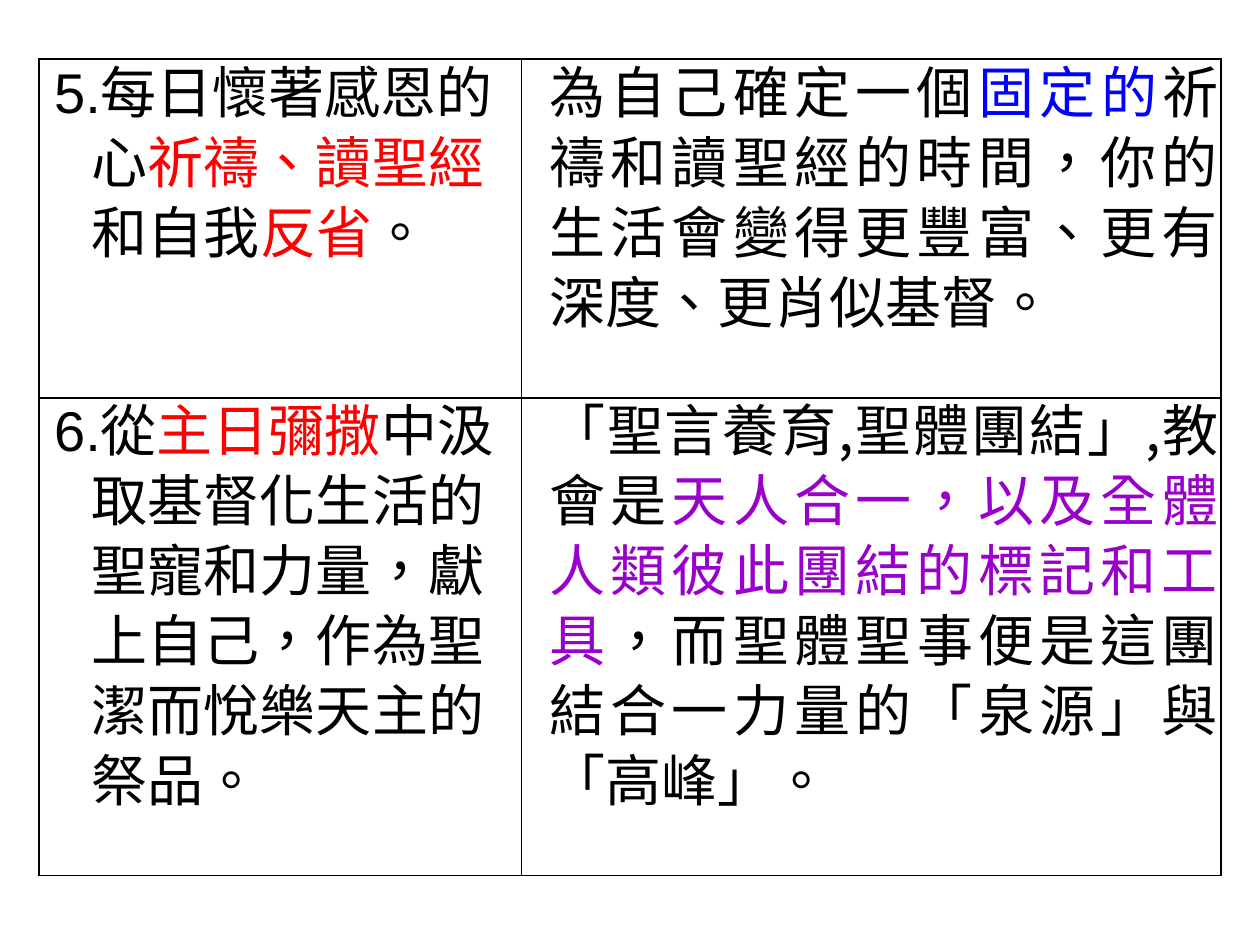
from lxml import etree
from pptx import Presentation
from pptx.dml.color import RGBColor
from pptx.enum.lang import MSO_LANGUAGE_ID
from pptx.enum.text import PP_ALIGN
from pptx.oxml.ns import qn
from pptx.util import Inches, Pt

JUSTIFY = PP_ALIGN.JUSTIFY
CHINESE = MSO_LANGUAGE_ID.TRADITIONAL_CHINESE
BLACK = RGBColor(0x00, 0x00, 0x00)
RED = RGBColor(0xFF, 0x00, 0x00)
BLUE = RGBColor(0x00, 0x00, 0xFF)
PURPLE = RGBColor(0x99, 0x00, 0xCC)
WHITE = RGBColor(0xFF, 0xFF, 0xFF)
LATIN_FONT = "Arial"
CHINESE_FONT = "Noto Sans CJK SC"

COLUMN_WIDTHS = [3.83, 5.55]
ROW_HEIGHTS = [2.69, 3.79]
NUMBER_INDENT = 0.1
PRACTICE_INDENT = 0.4
REASON_INDENT = 0.2
CELL_FORMAT = {
    "margin_left": Inches(0.02),
    "margin_right": Inches(0.02),
    "margin_top": 0,
    "margin_bottom": 0,
}
PARAGRAPH_FORMAT = {
    "alignment": JUSTIFY,
    "line_spacing": Pt(40),
    "space_before": Pt(0),
    "space_after": Pt(0),
}

PRACTICES_AND_REASONS = [
    (
        [
            [("5.每日懷著感恩的", BLACK)],
            [("心", BLACK), ("祈禱、讀聖經", RED)],
            [("和自我", BLACK), ("反省", RED), ("。", BLACK)],
        ],
        [[
            ("為自己確定一個", BLACK),
            ("固定的", BLUE),
            ("祈禱和讀聖經的時間，你的生活會變得更豐富、更有深度、更肖似基督。", BLACK),
        ]],
    ),
    (
        [
            [("6.從", BLACK), ("主日彌撒", RED), ("中汲", BLACK)],
            [("取基督化生活的", BLACK)],
            [("聖寵和力量，獻", BLACK)],
            [("上自己，作為聖", BLACK)],
            [("潔而悅樂天主的", BLACK)],
            [("祭品。", BLACK)],
        ],
        [[
            ("「聖言養育,聖體團結」,教會是", BLACK),
            ("天人合一，以及全體人類彼此團結的標記和工具", PURPLE),
            ("，而聖體聖事便是這團結合一力量的「泉源」與「高峰」。", BLACK),
        ]],
    ),
]


def add_borders(cell):
    properties = cell._tc.get_or_add_tcPr()
    for position, side in enumerate(("a:lnL", "a:lnR", "a:lnT", "a:lnB")):
        border = etree.Element(qn(side), w=str(Pt(1)))
        fill = etree.SubElement(border, qn("a:solidFill"))
        etree.SubElement(fill, qn("a:srgbClr"), val=str(BLACK))
        properties.insert(position, border)


def write_lines(cell, lines, latin_font, indents):
    for number, (line, indent) in enumerate(zip(lines, indents)):
        frame = cell.text_frame
        paragraph = frame.add_paragraph() if number else frame.paragraphs[0]
        for name, value in PARAGRAPH_FORMAT.items():
            setattr(paragraph, name, value)
        paragraph_properties = paragraph._p.get_or_add_pPr()
        paragraph_properties.set("marL", str(Inches(indent)))
        paragraph_properties.set("indent", "0")
        for text, color in line:
            run = paragraph.add_run()
            run.text = text
            run.font.size = Pt(32)
            run.font.name = latin_font
            run.font.color.rgb = color
            run.font.language_id = CHINESE
            etree.SubElement(run._r.rPr, qn("a:ea"), typeface=CHINESE_FONT)


presentation = Presentation()
presentation.slide_width = Inches(10)
presentation.slide_height = Inches(7.5)
slide = presentation.slides.add_slide(presentation.slide_layouts[6])

table = slide.shapes.add_table(
    len(ROW_HEIGHTS), len(COLUMN_WIDTHS),
    Inches(0.31), Inches(0.47),
    Inches(sum(COLUMN_WIDTHS)), Inches(sum(ROW_HEIGHTS)),
).table
table.first_row = False
table.horz_banding = False
for column, width in zip(table.columns, COLUMN_WIDTHS):
    column.width = Inches(width)
for row, height in zip(table.rows, ROW_HEIGHTS):
    row.height = Inches(height)

for row, (practice, reason) in zip(table.rows, PRACTICES_AND_REASONS):
    practice_cell, reason_cell = row.cells
    practice_indents = [NUMBER_INDENT] + [PRACTICE_INDENT] * (len(practice) - 1)
    write_lines(practice_cell, practice, LATIN_FONT, practice_indents)
    write_lines(reason_cell, reason, CHINESE_FONT, [REASON_INDENT])
    for cell in (practice_cell, reason_cell):
        for name, value in CELL_FORMAT.items():
            setattr(cell, name, value)
        cell.fill.solid()
        cell.fill.fore_color.rgb = WHITE
        add_borders(cell)

presentation.save("out.pptx")
